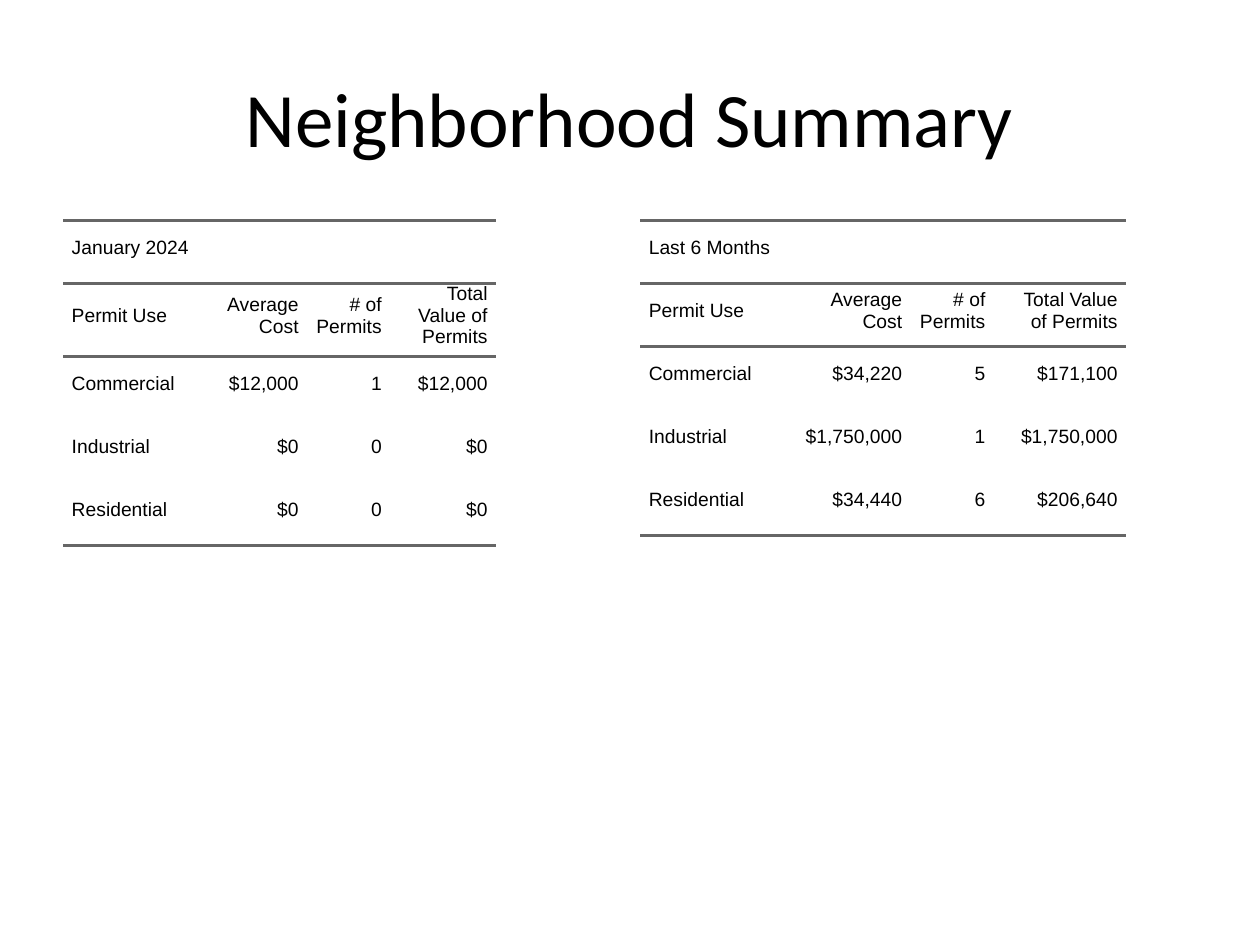
from lxml import etree
from pptx import Presentation, util as u
from pptx.dml.color import RGBColor
from pptx.enum import text
from pptx.oxml.ns import qn

BLACK = RGBColor(0, 0, 0)
GRAY = RGBColor(0x66, 0x66, 0x66)
WIDE, HIGH = u.Inches(10), u.Inches(7.5)
PAD = u.Pt(5)
ROW = HIGH / 15
PLAIN = "{2D5ABB26-0587-4C30-8999-92F81FD0307C}"
HEAD = ["Permit Use", "Average Cost", "# of Permits", "Total Value of Permits"]
USES = ["Commercial", "Industrial", "Residential"]
MONTH = [["$12,000", "1", "$12,000"], ["$0", "0", "$0"], ["$0", "0", "$0"]]
HALF = [["$34,220", "5", "$171,100"], ["$1,750,000", "1", "$1,750,000"],
        ["$34,440", "6", "$206,640"]]


def write(frame, words, font="Arial", size=11, align=text.PP_ALIGN.LEFT, gap=0):
    para = frame.paragraphs[0]
    para.alignment = align
    if gap:
        para.space_before = para.space_after = gap
        para._p.get_or_add_pPr().set("marL", str(gap))
    run = para.add_run()
    run.text = words
    run.font.name = font
    run.font.size = u.Pt(size)
    run.font.color.rgb = BLACK


def rule(cell, sides):
    props = cell._tc.get_or_add_tcPr()
    for spot, side in enumerate(sides):
        line = etree.Element(qn("a:ln" + side), w=str(u.Pt(1.5)))
        fill = etree.SubElement(line, qn("a:solidFill"))
        etree.SubElement(fill, qn("a:srgbClr"), val=str(GRAY))
        props.insert(spot, line)


def title(slide, left, top, width, height):
    box = slide.shapes.add_textbox(int(left), int(top), int(width), int(height))
    frame = box.text_frame
    frame.word_wrap = True
    frame.vertical_anchor = text.MSO_ANCHOR.MIDDLE
    write(frame, "Neighborhood Summary", font="Calibri", size=44,
          align=text.PP_ALIGN.CENTER)


def summary(slide, left, top, shares, name, data):
    rows = [[name, "", "", ""], HEAD]
    rows += [[use, *vals] for use, vals in zip(USES, data)]
    last = len(rows) - 1
    widths = [int(WIDE * share) for share in shares]
    frame = slide.shapes.add_table(len(rows), len(widths), int(left), int(top),
                                   sum(widths), int(ROW * len(rows)))
    grid = frame.table
    grid.first_row = grid.horz_banding = False
    grid._tbl.tblPr.find(qn("a:tableStyleId")).text = PLAIN
    for col, width in zip(grid.columns, widths):
        col.width = width
    for r, row in enumerate(rows):
        grid.rows[r].height = int(ROW)
        for c, words in enumerate(row):
            cell = grid.cell(r, c)
            cell.fill.background()
            cell.vertical_anchor = text.MSO_ANCHOR.MIDDLE
            cell.margin_left = cell.margin_top = 0
            cell.margin_right = cell.margin_bottom = PAD
            rule(cell, "TB" if r < 2 else "B" if r == last else "")
            if words:
                write(cell.text_frame, words, gap=PAD,
                      align=text.PP_ALIGN.RIGHT if c else text.PP_ALIGN.LEFT)
    grid.cell(0, 0).merge(grid.cell(0, len(widths) - 1))


def main():
    deck = Presentation()
    deck.slide_width, deck.slide_height = WIDE, HIGH
    slide = deck.slides.add_slide(deck.slide_layouts[6])
    edge = WIDE * 0.05
    top = ROW * 3.5
    summary(slide, edge, top, [0.11, 0.084, 0.066, 0.084], "January 2024", MONTH)
    summary(slide, WIDE * 0.508, top, [0.11, 0.105, 0.066, 0.105],
            "Last 6 Months", HALF)
    title(slide, edge, HIGH * 0.04, WIDE - 2 * edge, ROW * 2.5)
    deck.save("out.pptx")


if __name__ == "__main__":
    main()
